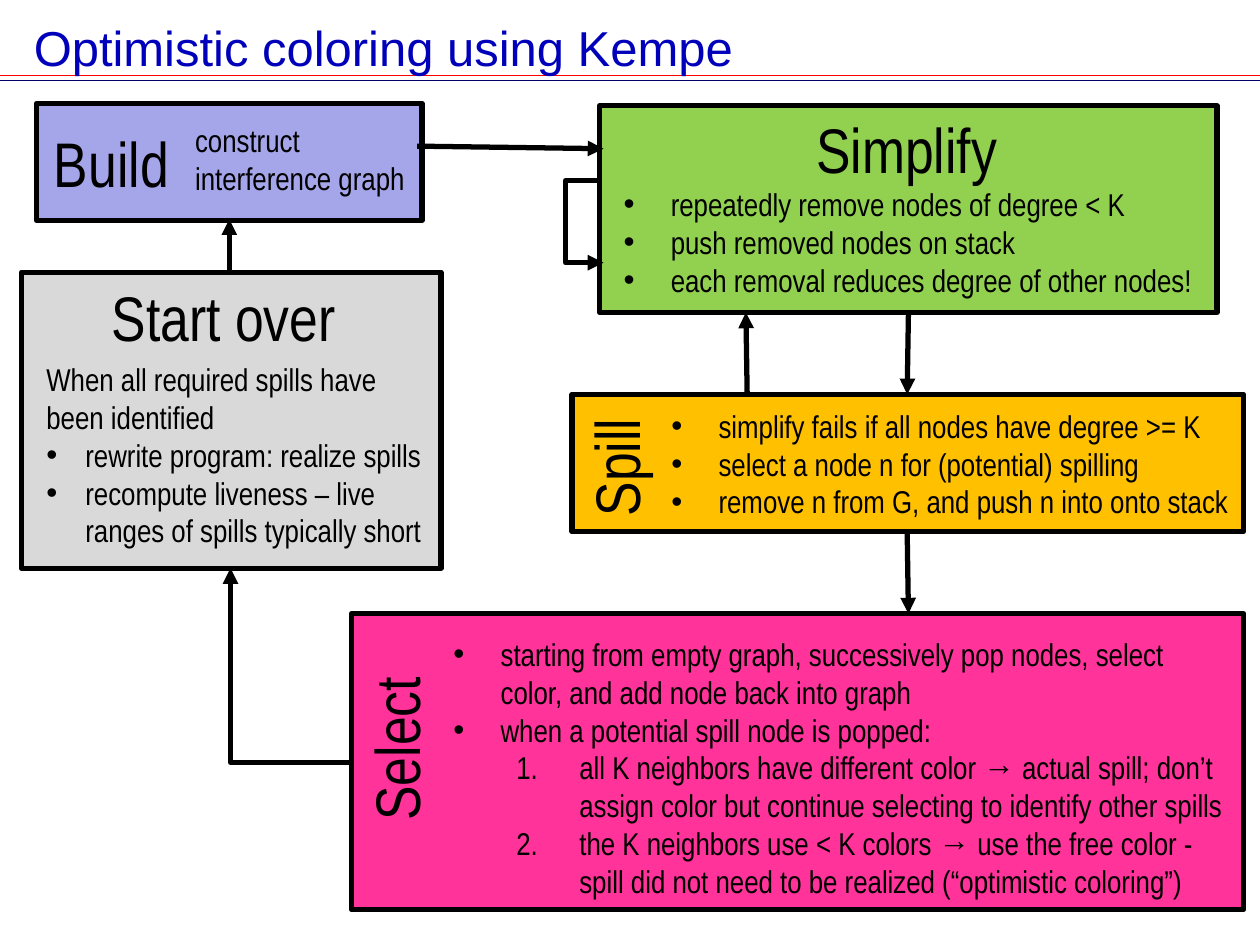
from lxml.etree import SubElement
from pptx import Presentation
from pptx.dml.color import RGBColor
from pptx.enum.shapes import MSO_CONNECTOR as Connector, MSO_SHAPE as Shape
from pptx.enum.text import MSO_ANCHOR as Anchor, MSO_AUTO_SIZE as AutoSize
from pptx.oxml.ns import qn
from pptx.util import Inches, Pt

COLUMNS = 100  # square grid: 100 columns by 75 rows
BLACK = "000000"
HEADING = {"name": "Arial Narrow", "size": Pt(36)}
BODY = {"name": "Arial Narrow", "size": Pt(18)}
TITLE = {"name": "Arial", "size": Pt(28)}
# Paragraph kinds: level, left margin, hanging indent (in columns)
PLAIN, BULLET, SHORT_BULLET, NUMBER = (0, 0, 0), (0, 3.75, 3.75), (0, 3.1, 3.1), (1, 10, 5)


def color(hex_string):
    return RGBColor.from_string(hex_string)


def set_values(target, values):
    for name, value in values.items():
        setattr(target, name, value)


class Diagram:
    def __init__(self, presentation):
        self.slide = presentation.slides.add_slide(presentation.slide_layouts[6])
        self.shapes = self.slide.shapes
        self.unit = presentation.slide_width / COLUMNS

    def grid(self, *cells):
        return [round(cell * self.unit) for cell in cells]

    def box(self, place, fill):
        shape = self.shapes.add_shape(Shape.RECTANGLE, *self.grid(*place))
        shape.shadow.inherit = False
        shape.fill.solid()
        shape.fill.fore_color.rgb = color(fill)
        self.stroke(shape)

    def stroke(self, shape, line_color=BLACK, width=3, arrow=False):
        shape.line.color.rgb = color(line_color)
        shape.line.width = Pt(width)
        if arrow:
            SubElement(shape.line._get_or_add_ln(), qn("a:tailEnd"), type="triangle")

    def text(self, place, paragraphs, font, font_color=BLACK, rotation=0, **frame_values):
        shape = self.shapes.add_textbox(*self.grid(*place))
        shape.rotation = rotation
        frame = shape.text_frame
        set_values(frame, {"word_wrap": True, "auto_size": AutoSize.SHAPE_TO_FIT_TEXT,
                           **frame_values})
        for index, (kind, words) in enumerate(paragraphs):
            paragraph = frame.paragraphs[0] if index == 0 else frame.add_paragraph()
            run = paragraph.add_run()
            run.text = words
            set_values(run.font, font)
            run.font.color.rgb = color(font_color)
            self.list_style(paragraph, kind)

    def list_style(self, paragraph, kind):
        level, margin, hanging = kind
        if not hanging:
            return
        paragraph.level = level
        properties = paragraph._p.get_or_add_pPr()
        margin, hanging = self.grid(margin, hanging)
        properties.set("marL", str(margin))
        properties.set("indent", str(-hanging))
        SubElement(properties, qn("a:buFont"), typeface="Arial" if kind != NUMBER else "+mj-lt")
        if kind == NUMBER:
            SubElement(properties, qn("a:buAutoNum"), type="arabicPeriod")
        else:
            SubElement(properties, qn("a:buChar"), char="•")

    def heading(self, place, words, rotation=0):
        self.text(place, [(PLAIN, words)], HEADING, rotation=rotation, word_wrap=False)

    def line(self, start, end, **style):
        connector = self.shapes.add_connector(Connector.STRAIGHT, *self.grid(*start, *end))
        self.stroke(connector, **style)
        SubElement(connector._element.spPr, qn("a:effectLst"))

    def bent_arrow(self, *points):
        start, *rest = [self.grid(*point) for point in points]
        builder = self.shapes.build_freeform(*start)
        builder.add_line_segments(rest, close=False)
        shape = builder.convert_to_shape()
        shape.shadow.inherit = False
        shape.fill.background()
        self.stroke(shape, arrow=True)


# Phase: box, fill, heading place, rotation, body place, paragraphs
PHASES = {
    "Build": ((2.9, 8.2, 30.6, 9.3), "A5A5E9", (3.3, 9.4, 11.2, 7.1), 0,
              (14.5, 9.1, 18.9, 7.1), [(PLAIN, "construct interference graph")]),
    "Simplify": ((47.6, 8.4, 49, 16.4), "92D050", (63.8, 8.3, 16.5, 7.1), 0,
                 (48.5, 14.2, 47.9, 10.1), [
                     (BULLET, "repeatedly remove nodes of degree < K"),
                     (BULLET, "push removed nodes on stack"),
                     (BULLET, "each removal reduces degree of other nodes!")]),
    "Spill": ((45.4, 31.3, 53.3, 10.9), "FFC000", (44, 33.5, 9.8, 7.1), 270,
              (52.3, 31.8, 46.4, 10.1), [
                  (BULLET, "simplify fails if all nodes have degree >= K"),
                  (BULLET, "select a node n for (potential) spilling"),
                  (BULLET, "remove n from G, and push n into onto stack")]),
    "Select": ((27.9, 48.7, 70.8, 23.5), "FF3399", (24.7, 55.8, 13.5, 7.1), 270,
               (35, 49.9, 63.7, 22.2), [
                   (BULLET, "starting from empty graph, successively pop nodes, select "
                            "color, and add node back into graph"),
                   (BULLET, "when a potential spill node is popped:"),
                   (NUMBER, "all K neighbors have different color → actual spill; don’t "
                            "assign color but continue selecting to identify other spills"),
                   (NUMBER, "the K neighbors use < K colors → use the free color - "
                            "spill did not need to be realized (“optimistic coloring”)")]),
    "Start over": ((1.7, 21.6, 33.3, 23.5), "D9D9D9", (7.9, 21.6, 20, 7.1), 0,
                   (2.7, 28.1, 32.3, 16.2), [
                       (PLAIN, "When all required spills have been identified"),
                       (SHORT_BULLET, "rewrite program: realize spills"),
                       (SHORT_BULLET, "recompute liveness – live ranges of spills "
                                      "typically short")]),
}

ARROWS = [
    ((33.1, 11.6), (47.9, 11.8)),  # Build to Simplify
    ((72.1, 24.8), (72, 31.3)),    # Simplify to Spill
    ((59.3, 31.3), (59.2, 24.8)),  # Spill back to Simplify
    ((72, 42.3), (72.1, 48.7)),    # Spill to Select
    ((18.2, 21.6), (18.2, 17.4)),  # Start over to Build
]


def main():
    presentation = Presentation()
    set_values(presentation, {"slide_width": Inches(10), "slide_height": Inches(7.5)})
    diagram = Diagram(presentation)

    # Title and its double rule
    for row, rule_color in ((6, "FF0000"), (6.4, "000066")):
        diagram.line((0, row), (COLUMNS, row), line_color=rule_color, width=1)
    diagram.text((1.7, 0.8, 97, 5.9), [(PLAIN, "Optimistic coloring using Kempe")], TITLE,
                 "0000BA", auto_size=AutoSize.NONE, vertical_anchor=Anchor.MIDDLE)

    # Phases of the algorithm
    for name, (box, fill, heading, rotation, body, paragraphs) in PHASES.items():
        diagram.box(box, fill)
        diagram.heading(heading, name, rotation)
        diagram.text(body, paragraphs, BODY)

    # Flow between phases
    for start, end in ARROWS:
        diagram.line(start, end, arrow=True)
    diagram.bent_arrow((47.4, 14.35), (44.9, 14.35), (44.9, 20.85), (47.9, 20.85))
    diagram.bent_arrow((27.9, 60.5), (18.3, 60.5), (18.3, 45.1))

    presentation.save("out.pptx")


if __name__ == "__main__":
    main()
